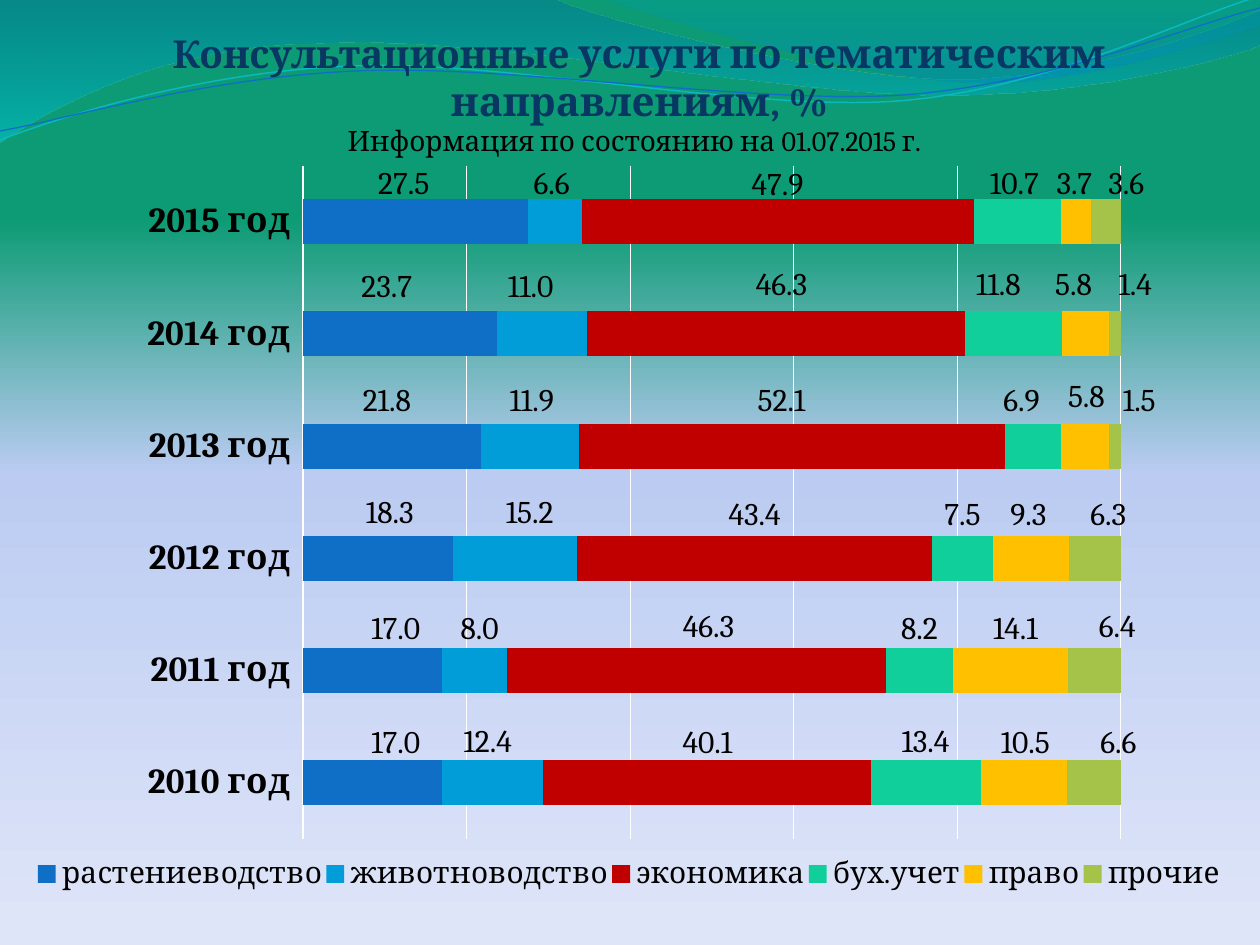
from lxml import etree
from pptx import Presentation
from pptx.chart.data import CategoryChartData
from pptx.dml.color import RGBColor
from pptx.enum.chart import (XL_CHART_TYPE, XL_LABEL_POSITION,
                             XL_LEGEND_POSITION, XL_TICK_MARK)
from pptx.enum.text import MSO_ANCHOR, PP_ALIGN
from pptx.oxml import parse_xml
from pptx.oxml.ns import nsdecls, qn
from pptx.util import Pt

PX = 914400 / 126
FONT = "Cambria"
BLACK = RGBColor(0x00, 0x00, 0x00)
WHITE = RGBColor(0xFF, 0xFF, 0xFF)
NAVY = RGBColor(0x08, 0x37, 0x63)
BLUE = RGBColor(0x0F, 0x6F, 0xC6)
SKY = RGBColor(0x00, 0x9D, 0xD9)
RED = RGBColor(0xC0, 0x00, 0x00)
MINT = RGBColor(0x10, 0xCF, 0x9B)
GOLD = RGBColor(0xFF, 0xC0, 0x00)
OLIVE = RGBColor(0xA5, 0xC2, 0x49)
TEAL = RGBColor(0x0A, 0xB8, 0xBF)
GREEN = RGBColor(0x0C, 0x9B, 0x74)
LILAC = RGBColor(0xBB, 0xCB, 0xF2)
PALE = RGBColor(0xDE, 0xE5, 0xF8)
DEEP = RGBColor(0x00, 0x74, 0xA1)
CYAN = RGBColor(0x00, 0xC6, 0xCF)
SEA = RGBColor(0x00, 0xA1, 0xA9)
OCEAN = RGBColor(0x00, 0x8B, 0xBF)

# Each path is a start point, then line ends (1 point) or curves (3 points).
WAVES = [
    ([[(0, -1)], [(554, -1)],
      [(600, 21), (837, 79), (955, 79)], [(1075, 79), (1207, 33), (1260, 11)],
      [(1261, 45)],
      [(1239, 55), (1096, 96), (940, 95)], [(784, 95), (481, 35), (324, 43)],
      [(162, 44), (58, 105), (-1, 142)]],
     [(0, DEEP, 45), (100, CYAN, 55)]),
    ([[(604, -1)], [(641, 14), (859, 78), (969, 82)],
      [(1079, 87), (1211, 40), (1260, 26)], [(1260, 0)]],
     [(0, SEA, 30), (80, OCEAN, 45)]),
]
LINES = [
    ([[(0, 140)], [(60, 117), (199, 72), (349, 66)],
      [(498, 59), (747, 112), (898, 101)],
      [(1049, 89), (1182, 19), (1257, -3)]], TEAL, 0.85),
    ([[(0, 131)], [(59, 121), (207, 77), (357, 71)],
      [(508, 64), (752, 105), (903, 95)],
      [(1053, 84), (1186, 26), (1260, 8)]], BLUE, 0.75),
]

CHART = (-24, 165, 1309, 780)
PLOT = (0.25, 0, 0.75, 0.864)
TOP = 120  # end of the value axis
YEARS = range(2010, 2016)
# name, colour, values, then the centre of each label in px
SERIES = [
    ("растениеводство", BLUE, (17, 17, 18.3, 21.8, 23.7, 27.5),
     [(396, 743), (396, 629), (390, 513), (387, 401), (387, 286), (404, 183)]),
    ("животноводство", SKY, (12.4, 8, 15.2, 11.9, 11, 6.6),
     [(488, 742), (480, 629), (530, 513), (532, 401), (531, 286), (552, 183)]),
    ("экономика", RED, (40.1, 46.3, 43.4, 52.1, 46.3, 47.9),
     [(708, 743), (709, 627), (755, 515), (782, 401), (782, 284), (778, 184)]),
    ("бух.учет", MINT, (13.4, 8.2, 7.5, 6.9, 11.8, 10.7),
     [(926, 742), (920, 629), (963, 515), (1022, 401), (999, 284), (1015, 183)]),
    ("право", GOLD, (10.5, 14.1, 9.3, 5.8, 5.8, 3.7),
     [(1026, 743), (1016, 629), (1029, 515), (1087, 397), (1074, 284),
      (1075, 183)]),
    ("прочие", OLIVE, (6.6, 6.4, 6.3, 1.5, 1.4, 3.6),
     [(1119, 743), (1118, 627), (1109, 515), (1140, 401), (1136, 284),
      (1127, 183)]),
]
# Settings that hide the lines from moved labels to their bars
NO_LEADER = (
    f'<c:extLst {nsdecls("c")}>'
    '<c:ext uri="{CE6537A1-D6FC-4f65-9D91-7224C49458BB}" '
    'xmlns:c15="http://schemas.microsoft.com/office/drawing/2012/chart">'
    '<c15:showLeaderLines val="0"/></c:ext></c:extLst>')


def px(*nums):
    return [round(n * PX) for n in nums]


def shade(fill, node, stops):
    """Give a top-to-bottom gradient of (position, colour, opacity) stops."""
    fill.gradient()
    fill.gradient_angle = 270
    stack = next(node.iter(qn("a:gsLst")))
    for old in list(stack):
        stack.remove(old)
    for pos, color, alpha in stops:
        stop = etree.SubElement(stack, qn("a:gs"), pos=str(pos * 1000))
        tint = etree.SubElement(stop, qn("a:srgbClr"), val=str(color))
        if alpha < 100:
            etree.SubElement(tint, qn("a:alpha"), val=str(alpha * 1000))


def add_path(slide, route, close):
    """Draw the path through its end points, then bend the curved parts."""
    ends = [part[-1] for part in route]
    pen = slide.shapes.build_freeform(*ends[0], scale=PX)
    pen.add_line_segments(ends[1:], close=close)
    shape = pen.convert_to_shape()
    shape.shadow.inherit = False
    left, top = (min(axis) for axis in zip(*ends))
    steps = list(shape.element.iter(qn("a:lnTo")))
    for step, part in zip(steps, route[1:]):
        if len(part) == 3:
            bend = etree.Element(qn("a:cubicBezTo"))
            for x, y in part:
                etree.SubElement(bend, qn("a:pt"),
                                 x=str(x - left), y=str(y - top))
            step.getparent().replace(step, bend)
    return shape


def add_wave(slide, route, stops):
    shape = add_path(slide, route, True)
    shape.line.fill.background()
    shade(shape.fill, shape.element, stops)


def add_line(slide, route, color, width):
    shape = add_path(slide, route, False)
    shape.fill.background()
    shape.line.color.rgb = color
    shape.line.width = Pt(width)


def style(font, size, color=BLACK, bold=False):
    font.name, font.size, font.bold = FONT, Pt(size), bold
    font.color.rgb = color


def add_text(slide, box, runs, anchor, inset=(13, 6, 13, 6), **look):
    """Add centred text from (text, size) runs."""
    frame = slide.shapes.add_textbox(*px(*box)).text_frame
    frame.word_wrap = True
    frame.vertical_anchor = anchor
    (frame.margin_left, frame.margin_top,
     frame.margin_right, frame.margin_bottom) = px(*inset)
    para = frame.paragraphs[0]
    para.alignment = PP_ALIGN.CENTER
    for text, size in runs:
        run = para.add_run()
        run.text = text
        style(run.font, size, **look)


def place(node, index, **vals):
    """Put a manual layout into a chart part."""
    for old in node.findall(qn("c:layout")):
        node.remove(old)
    body = "".join(f'<c:{key} val="{val}"/>' for key, val in vals.items())
    node.insert(index, parse_xml(
        f'<c:layout {nsdecls("c")}><c:manualLayout>{body}'
        '</c:manualLayout></c:layout>'))


def move_labels(series, values, base, spots):
    """Shift each label from the middle of its bar to its spot."""
    left, top, wide, high = CHART
    row = high * PLOT[3] / len(values)
    for point in range(len(values)):
        label = series.points[point].data_label
        label.position = XL_LABEL_POSITION.CENTER
    nodes = series._element.iter(qn("c:dLbl"))
    for n, (node, val, low, (x, y)) in enumerate(
            zip(nodes, values, base, spots)):
        mid = left + wide * (PLOT[0] + PLOT[2] * (low + val / 2) / TOP)
        level = top + row * (len(values) - n - 0.5)
        place(node, 1, x=round((x - mid) / wide, 4),
              y=round((y - level) / high, 4))


def hide_leaders(series):
    group = series._element.find(qn("c:dLbls"))
    for flag in group.findall(qn("c:showLeaderLines")):
        flag.set("val", "0")
    group.append(parse_xml(NO_LEADER))


def add_bars(slide):
    data = CategoryChartData(number_format="0.0")
    data.categories = [f"{year} год" for year in YEARS]
    for name, _, values, _ in SERIES:
        data.add_series(name, values)
    frame = slide.shapes.add_chart(
        XL_CHART_TYPE.BAR_STACKED, *px(*CHART), data)
    chart = frame.chart
    style(chart.font, 18)
    chart.has_title = False

    plot = chart.plots[0]
    plot.gap_width, plot.overlap = 150, 100
    plot.vary_by_categories = False
    base = [0] * len(YEARS)
    for series, (_, color, values, spots) in zip(plot.series, SERIES):
        series.format.fill.solid()
        series.format.fill.fore_color.rgb = color
        labels = series.data_labels
        labels.show_value = True
        labels.number_format = "0.0"
        labels.number_format_is_linked = False
        style(labels.font, 18)
        move_labels(series, values, base, spots)
        hide_leaders(series)
        base = [low + val for low, val in zip(base, values)]

    cat = chart.category_axis
    style(cat.tick_labels.font, 20, bold=True)
    cat.major_tick_mark = XL_TICK_MARK.CROSS
    cat.format.line.fill.background()
    axis = chart.value_axis
    axis.minimum_scale, axis.maximum_scale, axis.major_unit = 0, TOP, 20
    axis.visible = False
    axis.has_major_gridlines = True
    grid = axis.major_gridlines.format.line
    grid.color.rgb, grid.width = WHITE, Pt(0.75)

    chart.has_legend = True
    legend = chart.legend
    legend.position = XL_LEGEND_POSITION.BOTTOM
    legend.include_in_layout = False
    style(legend.font, 17)
    place(legend._element, 1, xMode="edge", yMode="edge",
          x=0.044, y=0.869, w=0.91, h=0.08)
    x, y, w, h = PLOT
    place(plot._element.getparent(), 0, layoutTarget="inner",
          xMode="edge", yMode="edge", x=x, y=y, w=w, h=h)


def main():
    deck = Presentation()
    deck.slide_width, deck.slide_height = px(1260, 945)
    slide = deck.slides.add_slide(deck.slide_layouts[6])
    shade(slide.background.fill, slide.element,
          [(23, GREEN, 100), (50, LILAC, 100), (98, PALE, 100)])
    for wave in WAVES:
        add_wave(slide, *wave)
    for line in LINES:
        add_line(slide, *line)
    add_text(slide, (94, 0, 1091, 125),
             [("Консультационные", 22),
              (" услуги по тематическим направлениям, %", 23)],
             MSO_ANCHOR.BOTTOM, inset=(0, 6, 0, 0), color=NAVY, bold=True)
    add_bars(slide)
    add_text(slide, (322, 125, 625, 30),
             [("Информация по состоянию на 01.07.2015 г.", 16)],
             MSO_ANCHOR.MIDDLE)
    deck.save("out.pptx")


if __name__ == "__main__":
    main()
